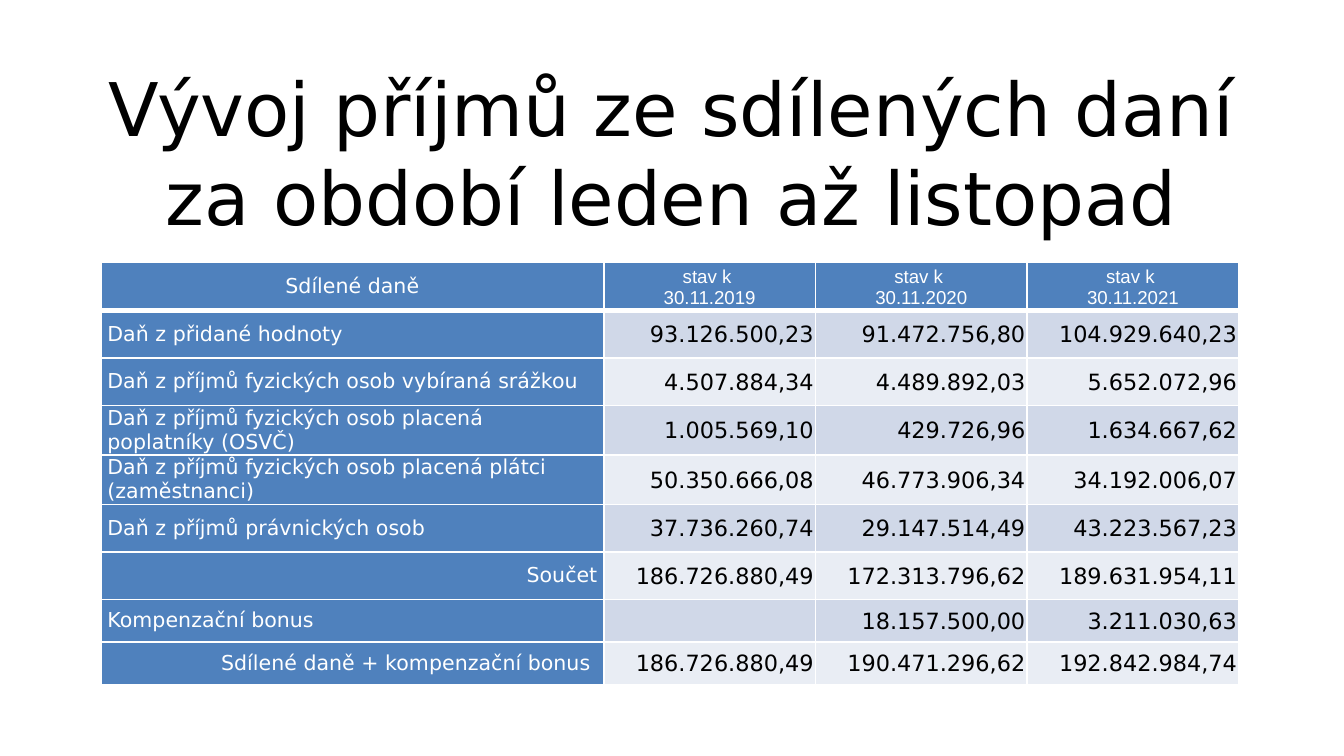
from lxml import etree
from pptx import Presentation
from pptx.dml.color import RGBColor
from pptx.enum.text import MSO_ANCHOR, PP_ALIGN
from pptx.oxml.ns import qn
from pptx.util import Cm, Pt

LEFT, CENTER, RIGHT = PP_ALIGN.LEFT, PP_ALIGN.CENTER, PP_ALIGN.RIGHT
MIDDLE = MSO_ANCHOR.MIDDLE
BLUE, WHITE, BLACK = "4F81BD", "FFFFFF", "000000"
BANDS = ("D0D8E8", "E9EDF4")

TITLE = "Vývoj příjmů ze sdílených daní za období leden až listopad"
HEADINGS = ("Sdílené daně", "stav k \n30.11.2019", "stav k \n30.11.2020", "stav k \n30.11.2021")
TAXES = [
    ("Daň z přidané hodnoty", "93.126.500,23", "91.472.756,80", "104.929.640,23"),
    ("Daň z příjmů fyzických osob vybíraná srážkou", "4.507.884,34", "4.489.892,03", "5.652.072,96"),
    ("Daň z příjmů fyzických osob placená poplatníky (OSVČ)", "1.005.569,10", "429.726,96", "1.634.667,62"),
    ("Daň z příjmů fyzických osob placená plátci (zaměstnanci)", "50.350.666,08", "46.773.906,34", "34.192.006,07"),
    ("Daň z příjmů právnických osob", "37.736.260,74", "29.147.514,49", "43.223.567,23"),
    ("Součet", "186.726.880,49", "172.313.796,62", "189.631.954,11"),
    ("Kompenzační bonus", "", "18.157.500,00", "3.211.030,63"),
    ("Sdílené daně + kompenzační bonus ", "186.726.880,49", "190.471.296,62", "192.842.984,74"),
]
TOTALS = ("Součet", "Sdílené daně + kompenzační bonus ")
COLUMN_WIDTHS = (9.5, 4, 4, 4)
ROW_HEIGHTS = (0.9,) * 7 + (0.8,) * 2


def rgb(value):
    return RGBColor.from_string(value)


def write(frame, text, size, color, align=LEFT, font="DejaVu Sans"):
    frame.word_wrap = True
    paragraph = frame.paragraphs[0]
    paragraph.text = text
    paragraph.alignment = align
    paragraph.font.size = Pt(size)
    paragraph.font.name = font
    paragraph.font.color.rgb = rgb(color)


def style_cell(cell, fill, margins, bottom=1):
    cell.vertical_anchor = MIDDLE
    cell.margin_left, cell.margin_top, cell.margin_right, cell.margin_bottom = map(Cm, margins)
    properties = cell._tc.get_or_add_tcPr()
    for side, width in (("lnL", 1), ("lnR", 1), ("lnT", 1), ("lnB", bottom)):
        line = etree.SubElement(properties, qn(f"a:{side}"), w=str(Pt(width)))
        solid = etree.SubElement(line, qn("a:solidFill"))
        etree.SubElement(solid, qn("a:srgbClr"), val=WHITE)
    cell.fill.solid()
    cell.fill.fore_color.rgb = rgb(fill)


def cell_format(row, column, text):
    if row == 0:
        if column == 0:
            return dict(size=11, color=WHITE, align=CENTER)
        return dict(size=10, color=WHITE, align=CENTER, font="Arial")
    if column == 0:
        return dict(size=11, color=WHITE, align=RIGHT if text in TOTALS else LEFT)
    return dict(size=12, color=BLACK, align=RIGHT)


def main():
    deck = Presentation()
    deck.slide_width, deck.slide_height = Cm(25.4), Cm(14.28)
    slide = deck.slides.add_slide(deck.slide_layouts[6])

    title = slide.shapes.add_textbox(Cm(1.27), Cm(0.58), Cm(22.86), Cm(4.57)).text_frame
    title.vertical_anchor = MIDDLE
    write(title, TITLE, size=39.6, color=BLACK, align=CENTER)

    rows = [HEADINGS, *TAXES]
    table = slide.shapes.add_table(
        len(rows), len(HEADINGS), Cm(1.91), Cm(4.96),
        Cm(sum(COLUMN_WIDTHS)), Cm(sum(ROW_HEIGHTS)),
    ).table
    for column, width in zip(table.columns, COLUMN_WIDTHS):
        column.width = Cm(width)
    for r, (texts, height) in enumerate(zip(rows, ROW_HEIGHTS)):
        table.rows[r].height = Cm(height)
        for c, text in enumerate(texts):
            cell = table.cell(r, c)
            fill = BLUE if r == 0 or c == 0 else BANDS[(r - 1) % 2]
            margins = (0.12, 0, 0.12, 0) if c == 0 else (0.03, 0.03, 0.03, 0)
            style_cell(cell, fill, margins, bottom=3 if r == 0 else 1)
            write(cell.text_frame, text, **cell_format(r, c, text))

    deck.save("out.pptx")


if __name__ == "__main__":
    main()
